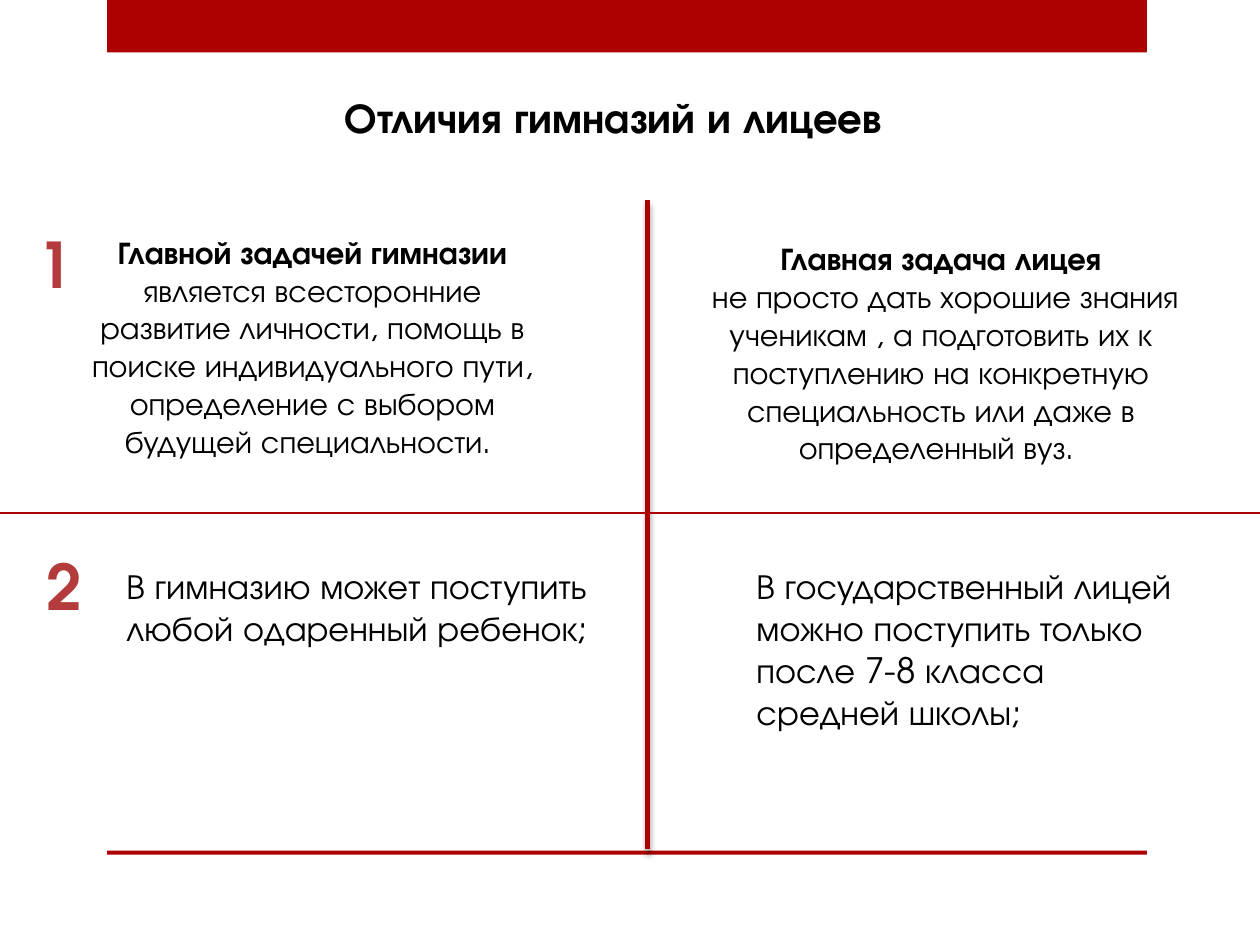
from lxml import etree
from pptx import Presentation
from pptx.dml.color import RGBColor
from pptx.enum.shapes import MSO_CONNECTOR, MSO_SHAPE
from pptx.enum.text import MSO_AUTO_SIZE, PP_ALIGN
from pptx.oxml.ns import qn
from pptx.util import Cm, Pt

RED = RGBColor(0xAD, 0x01, 0x01)
NUMBER_RED = RGBColor(0xB3, 0x3B, 0x3B)
BLACK = RGBColor(0, 0, 0)
FONT = "TeX Gyre Adventor"
LEFT, CENTER = PP_ALIGN.LEFT, PP_ALIGN.CENTER
RECTANGLE = MSO_SHAPE.RECTANGLE
STRAIGHT = MSO_CONNECTOR.STRAIGHT
NO_AUTOSIZE = MSO_AUTO_SIZE.NONE

deck = Presentation()
deck.slide_width = Cm(25.4)
deck.slide_height = Cm(19.05)
page = deck.slides.add_slide(deck.slide_layouts[6])


def add_text(left, top, width, height, paragraphs, size, align=LEFT, color=BLACK, wrap=True):
    box = page.shapes.add_textbox(Cm(left), Cm(top), Cm(width), Cm(height))
    frame = box.text_frame
    frame.word_wrap = wrap
    frame.auto_size = NO_AUTOSIZE
    for index, spans in enumerate(paragraphs):
        para = frame.paragraphs[0] if index == 0 else frame.add_paragraph()
        para.alignment = align
        para.font.name = FONT
        para.font.size = Pt(size)
        para.font.color.rgb = color
        for text, bold in spans:
            span = para.add_run()
            span.text = text
            span.font.bold = bold


def add_line(start_x, start_y, end_x, end_y, weight):
    line = page.shapes.add_connector(STRAIGHT, Cm(start_x), Cm(start_y), Cm(end_x), Cm(end_y))
    line.line.color.rgb = RED
    line.line.width = Pt(weight)
    return etree.SubElement(line._element.spPr, qn("a:effectLst"))


for top, height in [(0, 1.06), (17.15, 0.08)]:
    bar = page.shapes.add_shape(RECTANGLE, Cm(2.16), Cm(top), Cm(20.96), Cm(height))
    bar.shadow.inherit = False
    bar.fill.solid()
    bar.fill.fore_color.rgb = RED
    bar.line.fill.background()

lyceum_task = [
    [("Главная задача лицея", True)],
    [(" не просто дать хорошие знания ученикам , а подготовить их к поступлению "
      "на конкретную специальность или даже в определенный вуз. ", False)],
]
gymnasium_task = [[
    ("Главной задачей гимназии ", True),
    ("является всесторонние развитие личности, помощь в поиске индивидуального пути, "
     "определение с выбором будущей специальности. ", False),
]]
lyceum_entry = [[("В государственный лицей можно поступить только после 7-8 класса "
                  "средней школы;", False)]]
gymnasium_entry = [[("В гимназию может поступить любой одаренный ребенок;", False)]]

add_text(12.62, 4.7, 12.7, 5.64, lyceum_task, 18, CENTER)
add_text(1.3, 4.57, 10, 5.64, gymnasium_task, 18, CENTER)
add_text(6.7, 1.73, 12.7, 2.31, [[("Отличия гимназий и лицеев", True)]], 24)
for number, left, top in [("1", 0.5, 4.42), ("2", 0.68, 10.92)]:
    add_text(left, top, 1.22, 1.8, [[(number, True)]], 36, CENTER, NUMBER_RED, wrap=False)
add_text(15, 11.25, 9, 4.7, lyceum_entry, 20)
add_text(2.3, 11.25, 10, 2.82, gymnasium_entry, 20)

divider_effects = add_line(13.06, 4.04, 13.06, 17.12, 2.75)
shadow = etree.SubElement(divider_effects, qn("a:outerShdw"), blurRad=str(Pt(3)),
                          dist=str(Pt(3)), dir="5400000", rotWithShape="0")
shadow_color = etree.SubElement(shadow, qn("a:srgbClr"), val=str(BLACK))
etree.SubElement(shadow_color, qn("a:alpha"), val="35000")
add_line(0, 10.34, 25.4, 10.34, 1.25)

deck.save("out.pptx")
